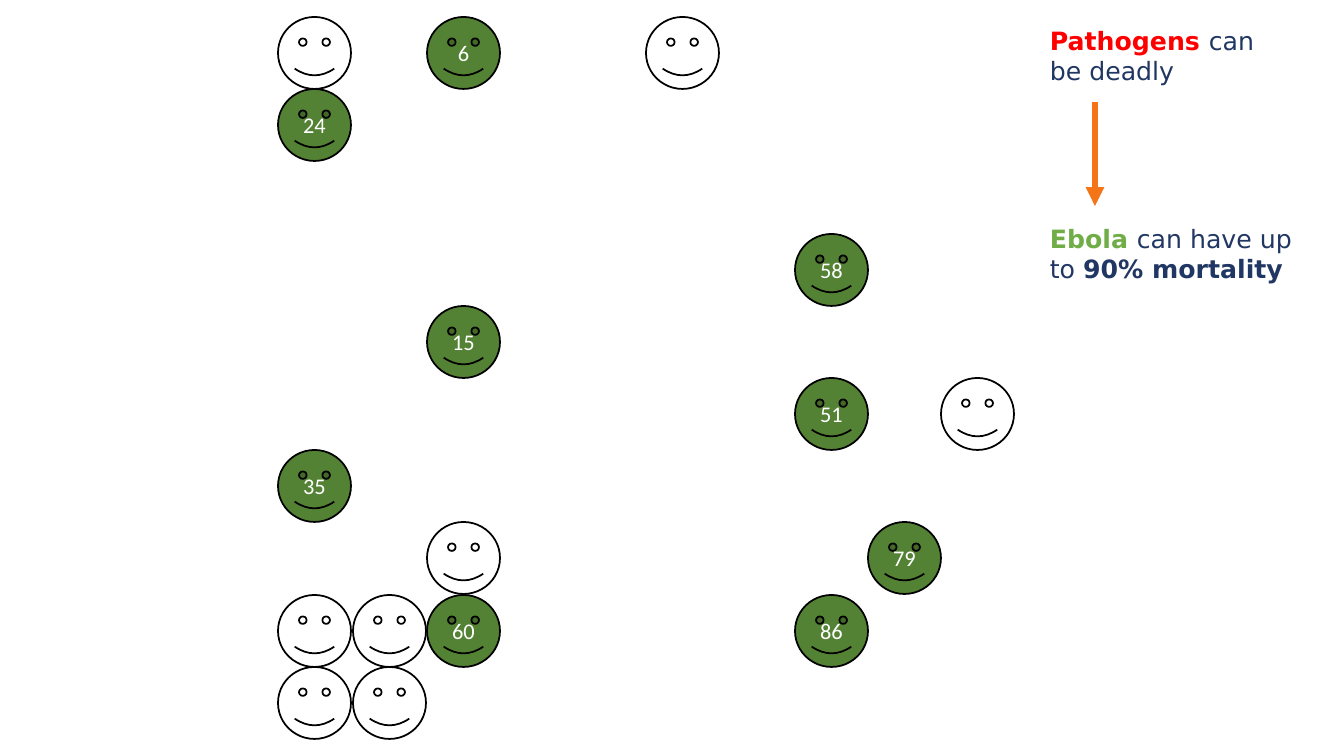
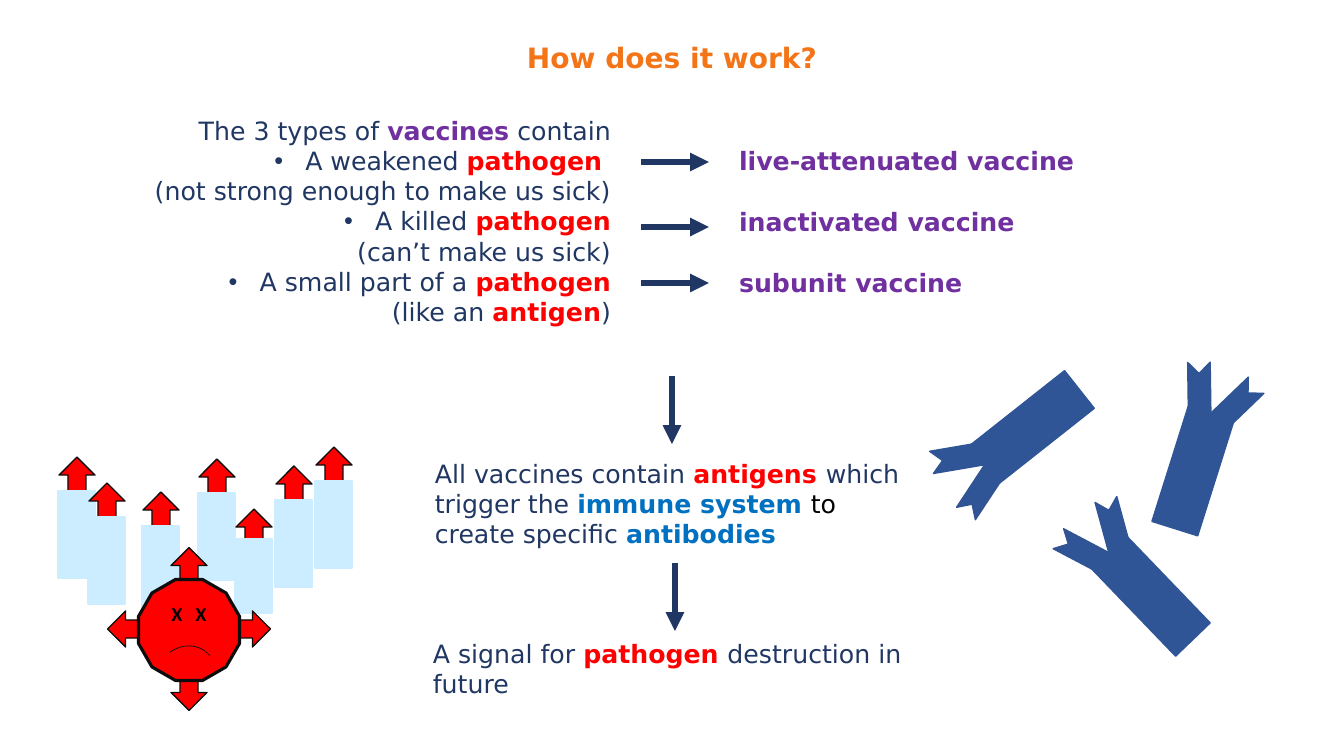
from dataclasses import dataclass
from math import cos, radians, sin

from lxml.etree import SubElement
from pptx import Presentation
from pptx.dml.color import RGBColor
from pptx.enum.shapes import MSO_CONNECTOR as Connector, MSO_SHAPE as Shape
from pptx.enum.text import MSO_ANCHOR as Anchor, MSO_AUTO_SIZE as AutoSize, PP_ALIGN as Align
from pptx.oxml.ns import qn
from pptx.util import Emu, Pt

EMU_PER_PX = 914400 / 100.8
WIDTH, HEIGHT = 1344, 756


@dataclass(frozen=True)
class Theme:
    white: str = "FFFFFF"
    black: str = "000000"
    navy: str = "213763"
    orange: str = "F37518"
    red: str = "FF0000"
    green: str = "70AD47"
    face_green: str = "548235"
    purple: str = "7030A0"
    blue: str = "0070C0"
    antibody: str = "2F5597"
    antibody_edge: str = "325491"
    pale: str = "CCECFF"
    outline: str = "0D0D0D"
    font: str = "DejaVu Sans"
    label_font: str = "Calibri"
    title_size: int = 20
    text_size: int = 18
    label_size: int = 16
    eye_size: int = 14


THEME = Theme()

# Faces: column x positions, then (column, row, label) for each face
FACE_COLUMNS = (278, 353, 427, 646, 795, 868, 941)
FACES = (
    (2, 0, "6"), (2, 4, "15"), (2, 8, "60"), (1, 9, ""), (0, 0, ""),
    (0, 1, "24"), (0, 6, "35"), (0, 8, ""), (0, 9, ""), (4, 3, "58"),
    (4, 5, "51"), (4, 8, "86"), (3, 0, ""), (5, 7, "79"), (6, 5, ""),
    (2, 7, ""), (1, 8, ""),
)

# Antigen spikes: centre x, top, length
SPIKES = (
    (77, 457, 121), (161, 492, 121), (294, 466, 121), (217, 459, 121),
    (254, 509, 104), (107, 483, 121), (334, 447, 121),
)

# Antibodies: centre x, centre y, rotation
ANTIBODIES = ((1032, 427, 321.7), (1151, 596, 46.1), (1193, 471, 107.5))


# Measures
def px(value):
    return Emu(round(value * EMU_PER_PX))


def centred(x, y, width, height):
    return x - width / 2, y - height / 2, width, height


def place(shape, box):
    for name, value in zip(("left", "top", "width", "height"), box):
        setattr(shape, name, px(value))


# Text
def plain(text, color=THEME.navy):
    return text, color, False


def strong(text, color=THEME.red):
    return text, color, True


def write(frame, paragraphs, align=Align.LEFT, size=THEME.text_size,
          font=THEME.font, gap=0, anchor=Anchor.TOP, bulleted=()):
    settings = {"word_wrap": True, "auto_size": AutoSize.NONE, "vertical_anchor": anchor}
    for name, value in settings.items():
        setattr(frame, name, value)
    for index, runs in enumerate(paragraphs):
        paragraph = frame.paragraphs[0] if index == 0 else frame.add_paragraph()
        layout = {"alignment": align, "space_before": Pt(0), "space_after": Pt(gap)}
        for name, value in layout.items():
            setattr(paragraph, name, value)
        set_bullet(paragraph, index in bulleted)
        for text, color, bold in runs:
            run = paragraph.add_run()
            run.text = text
            for name, value in {"name": font, "size": Pt(size), "bold": bold}.items():
                setattr(run.font, name, value)
            run.font.color.rgb = RGBColor.from_string(color)


def set_bullet(paragraph, bulleted):
    properties = paragraph._p.get_or_add_pPr()
    indent = px(31) if bulleted else 0
    properties.set("marL", str(indent))
    properties.set("indent", str(-indent))
    if bulleted:
        SubElement(properties, qn("a:buChar")).set("char", "•")
    else:
        SubElement(properties, qn("a:buNone"))


def fill_placeholder(placeholder, box, paragraphs, **formats):
    place(placeholder, box)
    write(placeholder.text_frame, paragraphs, **formats)


# Shapes and lines
def add_figure(slide, kind, box, fill=None, line=None, weight=1, rotation=0):
    shape = slide.shapes.add_shape(kind, *map(px, box))
    shape.shadow.inherit = False
    shape.rotation = rotation
    if fill:
        shape.fill.solid()
        shape.fill.fore_color.rgb = RGBColor.from_string(fill)
    else:
        shape.fill.background()
    if line:
        shape.line.color.rgb = RGBColor.from_string(line)
        shape.line.width = Pt(weight)
    else:
        shape.line.fill.background()
    return shape


def add_text_panel(slide, box, runs):
    panel = add_figure(slide, Shape.RECTANGLE, box, THEME.white)
    write(panel.text_frame, [runs])


def add_arrow(slide, start, end, color=THEME.navy):
    arrow = slide.shapes.add_connector(Connector.STRAIGHT, *map(px, start + end))
    arrow.line.color.rgb = RGBColor.from_string(color)
    arrow.line.width = Pt(4.5)
    properties = arrow._element.spPr
    SubElement(properties.find(qn("a:ln")), qn("a:tailEnd")).set("type", "triangle")
    SubElement(properties, qn("a:effectLst"))


def add_face(slide, column, row, label):
    box = (FACE_COLUMNS[column], round(17 + 72.2 * row), 73, 72)
    face = add_figure(slide, Shape.SMILEY_FACE, box,
                      THEME.face_green if label else None, THEME.black, 1.25)
    if label:
        write(face.text_frame, [[plain(label, THEME.white)]], Align.CENTER,
              THEME.label_size, THEME.label_font, anchor=Anchor.MIDDLE)


def add_antibody(slide, x, y, rotation):
    cosine, sine = cos(radians(rotation)), sin(radians(rotation))
    arms = ((-57, 11, -18.3, THEME.antibody_edge), (-56, -10, 28.6, THEME.antibody))
    for along, across, turn, edge in arms:
        centre = x + along * cosine - across * sine, y + along * sine + across * cosine
        add_figure(slide, Shape.NOTCHED_RIGHT_ARROW, centred(*centre, 102, 45),
                   THEME.antibody, edge, rotation=(rotation + turn) % 360)
    add_figure(slide, Shape.RECTANGLE, centred(x, y, 121, 48),
               THEME.antibody, THEME.antibody, rotation=rotation)


def add_spike(slide, x, top, length):
    add_figure(slide, Shape.RIGHT_ARROW, centred(x, top + length / 2, length, 36),
               THEME.red, THEME.outline, rotation=270)
    stem = (x - 19, top + round(length * 0.285), 37, round(length * 0.715))
    add_figure(slide, Shape.RECTANGLE, stem, THEME.pale, THEME.pale)


def add_pathogen(slide, x, y):
    for rotation in (270, 0, 180, 90):
        centre = x + 20 * cos(radians(rotation)), y + 20 * sin(radians(rotation))
        add_figure(slide, Shape.RIGHT_ARROW, centred(*centre, 123, 36),
                   THEME.red, THEME.outline, rotation=rotation)
    add_figure(slide, Shape.DODECAGON, centred(x, y + 1, 101, 101),
               THEME.red, THEME.outline, 2.25)
    add_figure(slide, Shape.ARC, centred(x - 3, y + 45, 60, 54),
               line=THEME.outline, weight=0.5, rotation=322.5)
    for eye_x in (x - 12, x + 12):
        eye = slide.shapes.add_textbox(*map(px, centred(eye_x, y - 15, 20, 34)))
        for side in ("left", "right", "top", "bottom"):
            setattr(eye.text_frame, f"margin_{side}", 0)
        write(eye.text_frame, [[strong("X", THEME.black)]], Align.CENTER,
              THEME.eye_size, THEME.label_font, anchor=Anchor.MIDDLE)


# Slides
def build_mortality(presentation):
    slide = presentation.slides.add_slide(presentation.slide_layouts[6])
    for face in FACES:
        add_face(slide, *face)
    add_text_panel(slide, (1040, 218, 262, 72), [
        strong("Ebola ", THEME.green), plain("can have up to "),
        strong("90% mortality", THEME.navy)])
    add_text_panel(slide, (1040, 20, 262, 72),
                   [strong("Pathogens "), plain("can be deadly")])
    add_arrow(slide, (1095, 102), (1095, 206), THEME.orange)


def build_vaccines(presentation):
    slide = presentation.slides.add_slide(presentation.slide_layouts[3])
    title, contents, names = slide.placeholders

    # Title, vaccine contents and matching names
    fill_placeholder(title, (0, 35, WIDTH, 44),
                     [[strong("How does it work?", THEME.orange)]],
                     align=Align.CENTER, size=THEME.title_size)
    fill_placeholder(contents, (35, 110, 586, 224), [
        [plain("The 3 types of "), strong("vaccines", THEME.purple), plain(" contain")],
        [plain("A weakened "), strong("pathogen ")],
        [plain("(not strong enough to make us sick)")],
        [plain("A killed "), strong("pathogen")],
        [plain("(can’t make us sick)")],
        [plain("A small part of a "), strong("pathogen")],
        [plain("(like an "), strong("antigen"), plain(")")],
    ], align=Align.RIGHT, bulleted=(1, 3, 5))
    vaccines = ("live-attenuated vaccine", "inactivated vaccine", "subunit vaccine")
    fill_placeholder(names, (729, 140, 586, 194),
                     [[strong(name, THEME.purple)] for name in vaccines], gap=22)
    for y in (162, 227, 283):
        add_arrow(slide, (641, y), (709, y))

    # Steps to immunity
    add_text_panel(slide, (425, 453, 494, 102), [
        plain("All vaccines contain "), strong("antigens "),
        plain("which trigger the "), strong("immune system ", THEME.blue),
        plain("to ", THEME.black), plain("create specific "),
        strong("antibodies", THEME.blue)])
    add_arrow(slide, (672, 376), (672, 444))
    add_text_panel(slide, (423, 633, 494, 72), [
        plain("A signal for "), strong("pathogen "), plain("destruction in future")])
    add_arrow(slide, (675, 563), (675, 631))

    # Antibodies, antigens and pathogen
    for antibody in ANTIBODIES:
        add_antibody(slide, *antibody)
    for spike in SPIKES:
        add_spike(slide, *spike)
    add_pathogen(slide, 189, 629)


def main():
    presentation = Presentation()
    presentation.slide_width, presentation.slide_height = px(WIDTH), px(HEIGHT)
    build_mortality(presentation)
    build_vaccines(presentation)
    presentation.save("out.pptx")


if __name__ == "__main__":
    main()
